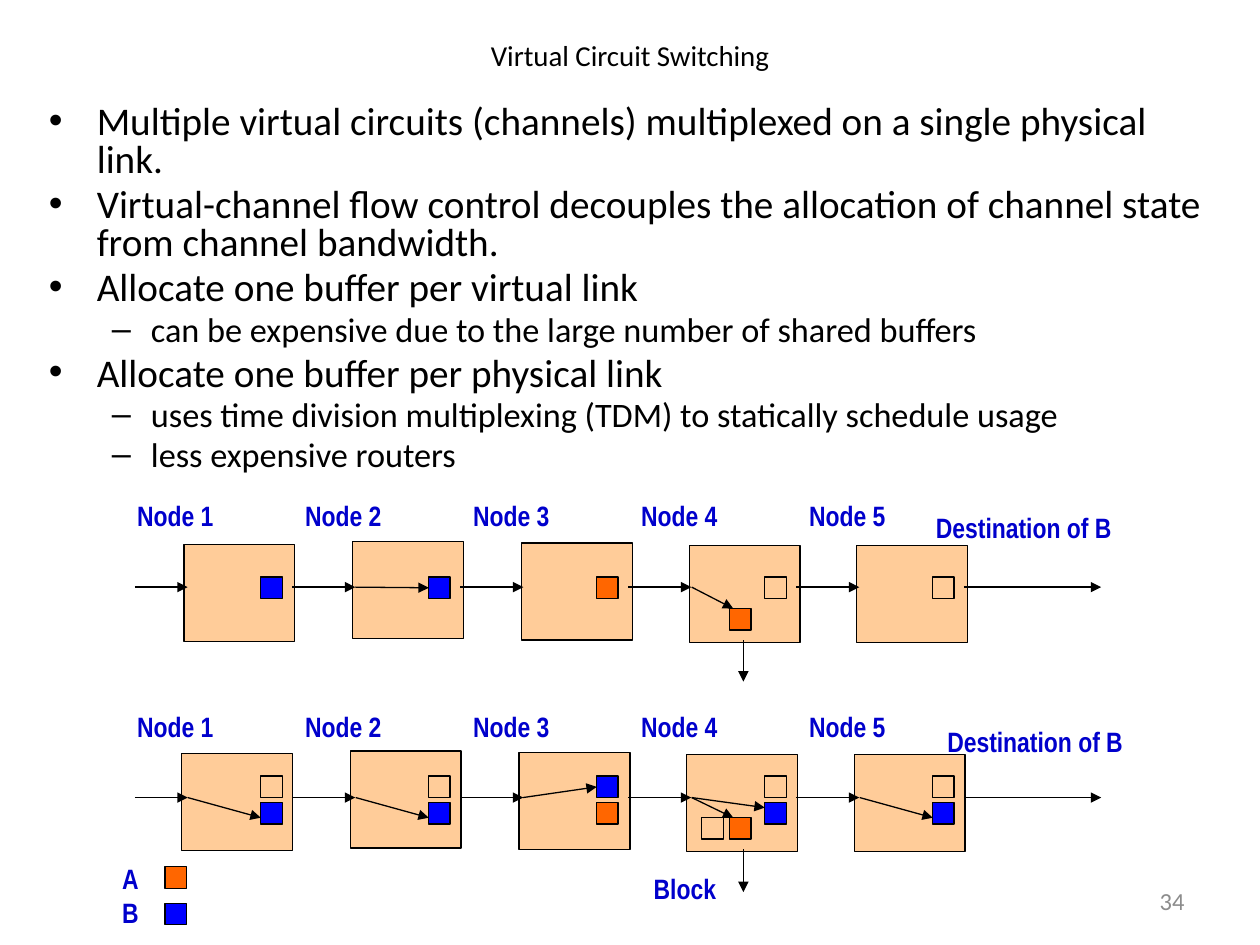
from lxml.etree import SubElement
from pptx import Presentation
from pptx.dml.color import RGBColor
from pptx.enum.shapes import MSO_CONNECTOR, MSO_SHAPE
from pptx.enum.text import MSO_ANCHOR, PP_ALIGN
from pptx.oxml.ns import qn
from pptx.util import Inches, Pt

BLACK = RGBColor(0x00, 0x00, 0x00)
GRAY = RGBColor(0x8C, 0x8C, 0x8C)
NAVY = RGBColor(0x00, 0x00, 0xCC)
BLUE = RGBColor(0x00, 0x00, 0xFF)
ORANGE = RGBColor(0xFF, 0x66, 0x00)
PEACH = RGBColor(0xFF, 0xCC, 0x99)

STEP = 4 / 3
SIDE = 0.17
BOXES = [(1.46, 4.32), (2.8, 4.3), (4.14, 4.31), (5.47, 4.33), (6.8, 4.33)]
POINTS = [
    (0, "Multiple virtual circuits (channels) multiplexed on a single physical link."),
    (0, "Virtual-channel flow control decouples the allocation of channel state from channel bandwidth."),
    (0, "Allocate one buffer per virtual link"),
    (1, "can be expensive due to the large number of shared buffers"),
    (0, "Allocate one buffer per physical link"),
    (1, "uses time division multiplexing (TDM) to statically schedule usage"),
    (1, "less expensive routers"),
]
LEVELS = [(22.4, 0.38, -0.38, "•"), (19.6, 0.81, -0.31, "–")]


class Canvas:
    body = "Calibri"
    label = "Arial Narrow"
    width = Pt(0.75)

    def __init__(self, slide):
        self.shapes = slide.shapes

    def frame(self, x, y, w, h):
        box = self.shapes.add_textbox(Inches(x), Inches(y), Inches(w), Inches(h))
        box.text_frame.word_wrap = True
        return box.text_frame

    def run(self, para, text, size, color, font, bold=False):
        run = para.add_run()
        run.text = text
        run.font.size = Pt(size)
        run.font.name = font
        run.font.bold = bold
        run.font.color.rgb = color

    def text(self, x, y, w, h, text, size, color, align):
        frame = self.frame(x, y, w, h)
        para = frame.paragraphs[0]
        para.alignment = align
        self.run(para, text, size, color, self.body)
        return frame

    def bullets(self, x, y, w, h, points):
        frame = self.frame(x, y, w, h)
        for i, (level, text) in enumerate(points):
            para = frame.add_paragraph() if i else frame.paragraphs[0]
            size, left, hang, mark = LEVELS[level]
            para.level = level
            para.line_spacing = 0.8
            para.space_before = Pt(size * 0.2)
            props = para._p.get_or_add_pPr()
            props.set("marL", str(Inches(left)))
            props.set("indent", str(Inches(hang)))
            SubElement(props, qn("a:buFont")).set("typeface", "Arial")
            SubElement(props, qn("a:buChar")).set("char", mark)
            self.run(para, text, size, BLACK, self.body)

    def tag(self, x, y, w, *lines):
        frame = self.frame(x, y, w, 0.1 + 0.27 * len(lines))
        for i, line in enumerate(lines):
            para = frame.add_paragraph() if i else frame.paragraphs[0]
            self.run(para, line, 16, NAVY, self.label, True)

    def rect(self, x, y, w, h, fill):
        rect = self.shapes.add_shape(
            MSO_SHAPE.RECTANGLE, Inches(x), Inches(y), Inches(w), Inches(h))
        rect.shadow.inherit = False
        if fill is None:
            rect.fill.background()
        else:
            rect.fill.solid()
            rect.fill.fore_color.rgb = fill
        rect.line.color.rgb = BLACK
        rect.line.width = self.width
        return rect

    def buffer(self, x, y, fill=None):
        return self.rect(x, y, SIDE, SIDE, fill)

    def arrow(self, x1, y1, x2, y2, target=None):
        line = self.shapes.add_connector(
            MSO_CONNECTOR.STRAIGHT, Inches(x1), Inches(y1), Inches(x2), Inches(y2))
        line.line.color.rgb = BLACK
        line.line.width = self.width
        SubElement(line.line._get_or_add_ln(), qn("a:tailEnd")).set("type", "triangle")
        SubElement(line._element.spPr, qn("a:effectLst"))
        if target is not None:
            line.end_connect(target, 1)

    def nodes(self, dx, dy):
        for x, y in BOXES:
            self.rect(x + dx, y + dy, 0.88, 0.77, PEACH)

    def labels(self, y):
        for i in range(5):
            self.tag(0.99 + STEP * i, y, 1.5, f"Node {i + 1}")

    def buffers(self, y, fills):
        return [self.buffer(2.07 + STEP * i, y, fill) for i, fill in enumerate(fills)]

    def links(self, y):
        self.arrow(1.07, y, 1.49, y)
        for i in range(4):
            x = 2.32 + STEP * i
            self.arrow(x, y, x + 0.5, y)
        self.arrow(7.65, y, 8.74, y)


def main():
    deck = Presentation()
    deck.slide_width, deck.slide_height = Inches(10), Inches(7.5)
    art = Canvas(deck.slides.add_slide(deck.slide_layouts[6]))

    number = art.text(7.17, 6.95, 2.33, 0.4, "34", 14, GRAY, PP_ALIGN.RIGHT)
    number.vertical_anchor = MSO_ANCHOR.MIDDLE
    title = art.text(0.5, 0.3, 9, 0.37, "Virtual Circuit Switching", 16.5, BLACK, PP_ALIGN.CENTER)
    title.paragraphs[0].line_spacing = 0.8
    art.bullets(0.29, 0.79, 9.46, 3.17, POINTS)

    art.nodes(0, 0)
    art.labels(3.91)
    single = art.buffers(4.58, [BLUE, BLUE, ORANGE, None, None])
    art.links(4.66)
    art.tag(7.33, 4, 1.75, "Destination of B")
    art.buffer(5.79, 4.83, ORANGE)
    art.arrow(5.49, 4.66, 5.82, 4.83)
    art.arrow(5.9, 5.08, 5.9, 5.41)
    art.arrow(2.82, 4.66, 3.4, 4.66, single[1])

    art.nodes(-0.02, 1.66)
    art.labels(5.58)
    upper = art.buffers(6.16, [None, None, BLUE, None, None])
    art.buffers(6.37, [BLUE, BLUE, ORANGE, BLUE, BLUE])
    art.links(6.33)
    for i in (0, 1, 4):
        x = 1.49 + STEP * i
        art.arrow(x, 6.33, x + 0.58, 6.49)
    art.arrow(4.15, 6.33, 4.74, 6.24, upper[2])
    art.tag(7.42, 5.7, 1.75, "Destination of B")
    art.buffer(5.57, 6.49)
    art.buffer(5.79, 6.49, ORANGE)
    art.arrow(5.49, 6.33, 5.82, 6.49)
    art.arrow(5.49, 6.33, 6.07, 6.41)
    art.arrow(5.9, 6.74, 5.9, 7.08)
    art.tag(5.09, 6.87, 1.5, "Block")

    art.tag(0.87, 6.79, 0.75, "A", "B")
    art.buffer(1.31, 6.88, ORANGE)
    art.buffer(1.31, 7.17, BLUE)

    deck.save("out.pptx")


if __name__ == "__main__":
    main()
